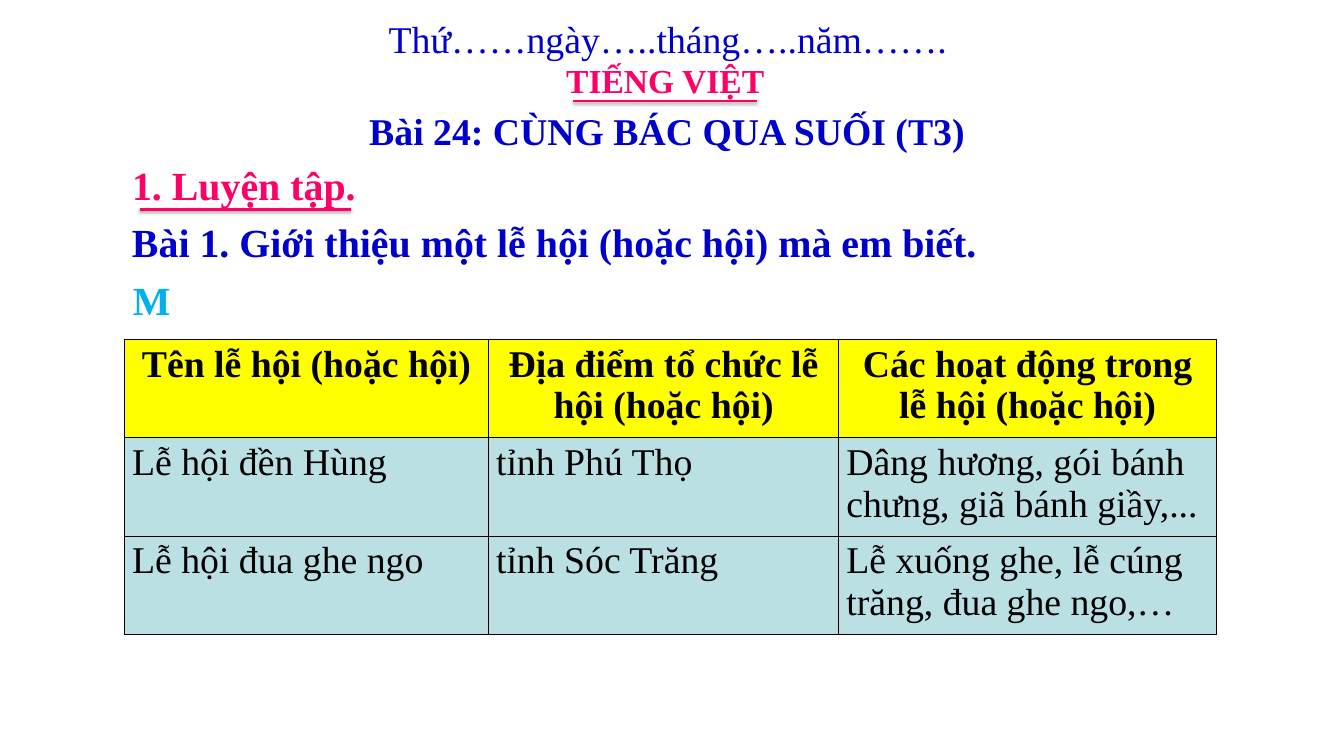
"""Build a Vietnamese lesson slide with headings and a table of festivals."""
from dataclasses import dataclass

from lxml.etree import SubElement
from pptx import Presentation
from pptx.dml.color import RGBColor
from pptx.enum.shapes import MSO_CONNECTOR as Connector
from pptx.enum.text import MSO_AUTO_SIZE as AutoSize, PP_ALIGN as Align
from pptx.oxml import parse_xml
from pptx.oxml.ns import nsdecls, qn
from pptx.util import Inches, Pt

BLUE = RGBColor(0x00, 0x00, 0xCC)
PINK = RGBColor(0xFF, 0x00, 0x66)
SKY = RGBColor(0x00, 0xB0, 0xF0)
BLACK = RGBColor(0x00, 0x00, 0x00)
YELLOW = RGBColor(0xFF, 0xFF, 0x00)
PALE_TEAL = RGBColor(0xBB, 0xE0, 0xE3)

TABLE_SIZE = 36
ROW_HEIGHT = 1.3
COLUMN_WIDTHS = (4.82, 4.64, 5)
FESTIVALS = (
    ("Tên lễ hội (hoặc hội)", "Địa điểm tổ chức lễ hội (hoặc hội)",
     "Các hoạt động trong lễ hội (hoặc hội)"),
    ("Lễ hội đền Hùng", "tỉnh Phú Thọ",
     "Dâng hương, gói bánh chưng, giã bánh giầy,..."),
    ("Lễ hội đua ghe ngo", "tỉnh Sóc Trăng",
     "Lễ xuống ghe, lễ cúng trăng, đua ghe ngo,…"),
)


@dataclass(frozen=True)
class Heading:
    words: str
    left: float
    top: float
    width: float
    height: float
    size: int
    color: RGBColor
    bold: bool = True
    align: Align = Align.LEFT
    wrap: bool = True


@dataclass(frozen=True)
class Underline:
    left: float
    right: float
    y: float
    weight: float
    shadow_distance: float
    shadow_opacity: int


HEADINGS = (
    Heading("Thứ……ngày…..tháng…..năm…….", 5.05, 0.16, 7.67, 0.71, 36, BLUE,
            bold=False, wrap=False),
    Heading("TIẾNG VIỆT", 7.4, 0.75, 2.85, 0.64, 32, PINK, wrap=False),
    Heading("Bài 24: CÙNG BÁC QUA SUỐI (T3)", 4.75, 1.38, 8.17, 0.71, 36, BLUE,
            align=Align.CENTER, wrap=False),
    Heading("1. Luyện tập.", 1.65, 2.08, 4.58, 0.74, 38, PINK),
    Heading("Bài 1. Giới thiệu một lễ hội (hoặc hội) mà em biết.",
            1.65, 2.83, 15.27, 0.74, 38, BLUE, align=Align.JUSTIFY),
    Heading("M", 1.66, 3.6, 0.91, 0.74, 38, SKY, align=Align.JUSTIFY),
)
UNDERLINES = (
    Underline(7.59, 10.03, 1.34, 2, 1.6, 38),
    Underline(1.85, 4.65, 2.77, 3, 1.8, 35),
)


def write(frame, words: str, size: int, color: RGBColor, bold: bool, align: Align) -> None:
    paragraph = frame.paragraphs[0]
    paragraph.alignment = align
    run = paragraph.add_run()
    run.text = words
    font_format = {"name": "Times New Roman", "size": Pt(size), "bold": bold}
    for attribute, value in font_format.items():
        setattr(run.font, attribute, value)
    run.font.color.rgb = color


def draw_heading(slide, heading: Heading) -> None:
    frame = slide.shapes.add_textbox(
        Inches(heading.left), Inches(heading.top),
        Inches(heading.width), Inches(heading.height)).text_frame
    frame_format = {"word_wrap": heading.wrap, "auto_size": AutoSize.SHAPE_TO_FIT_TEXT}
    for attribute, value in frame_format.items():
        setattr(frame, attribute, value)
    write(frame, heading.words, heading.size, heading.color, heading.bold, heading.align)


def draw_underline(slide, underline: Underline) -> None:
    y = Inches(underline.y)
    stroke = slide.shapes.add_connector(
        Connector.STRAIGHT, Inches(underline.left), y, Inches(underline.right), y)
    stroke.line.color.rgb = PINK
    stroke.line.width = Pt(underline.weight)
    effects = SubElement(stroke._element.spPr, qn("a:effectLst"))
    effects.append(parse_xml(
        f'<a:outerShdw {nsdecls("a")} blurRad="{Pt(3.1)}" '
        f'dist="{Pt(underline.shadow_distance)}" dir="5400000" rotWithShape="0">'
        f'<a:srgbClr val="{BLACK}"><a:alpha val="{underline.shadow_opacity * 1000}"/>'
        '</a:srgbClr></a:outerShdw>'))


def add_borders(cell) -> None:
    properties = cell._tc.get_or_add_tcPr()
    for position, side in enumerate(("lnL", "lnR", "lnT", "lnB")):
        properties.insert(position, parse_xml(
            f'<a:{side} {nsdecls("a")} w="{Pt(1)}"><a:solidFill>'
            f'<a:srgbClr val="{BLACK}"/></a:solidFill></a:{side}>'))


def draw_festivals(slide) -> None:
    table = slide.shapes.add_table(
        len(FESTIVALS), len(COLUMN_WIDTHS), Inches(1.65), Inches(4.5),
        Inches(sum(COLUMN_WIDTHS)), Inches(ROW_HEIGHT * len(FESTIVALS))).table
    for column, width in zip(table.columns, COLUMN_WIDTHS):
        column.width = Inches(width)
    for row_index, festival in enumerate(FESTIVALS):
        is_header = row_index == 0
        for column_index, words in enumerate(festival):
            cell = table.cell(row_index, column_index)
            cell.fill.solid()
            cell.fill.fore_color.rgb = YELLOW if is_header else PALE_TEAL
            add_borders(cell)
            write(cell.text_frame, words, TABLE_SIZE, BLACK, is_header,
                  Align.CENTER if is_header else Align.LEFT)


def main() -> None:
    presentation = Presentation()
    presentation.slide_width = Inches(17.8)
    presentation.slide_height = Inches(10)
    slide = presentation.slides.add_slide(presentation.slide_layouts[6])
    for heading in HEADINGS:
        draw_heading(slide, heading)
    for underline in UNDERLINES:
        draw_underline(slide, underline)
    draw_festivals(slide)
    presentation.save("out.pptx")


if __name__ == "__main__":
    main()
